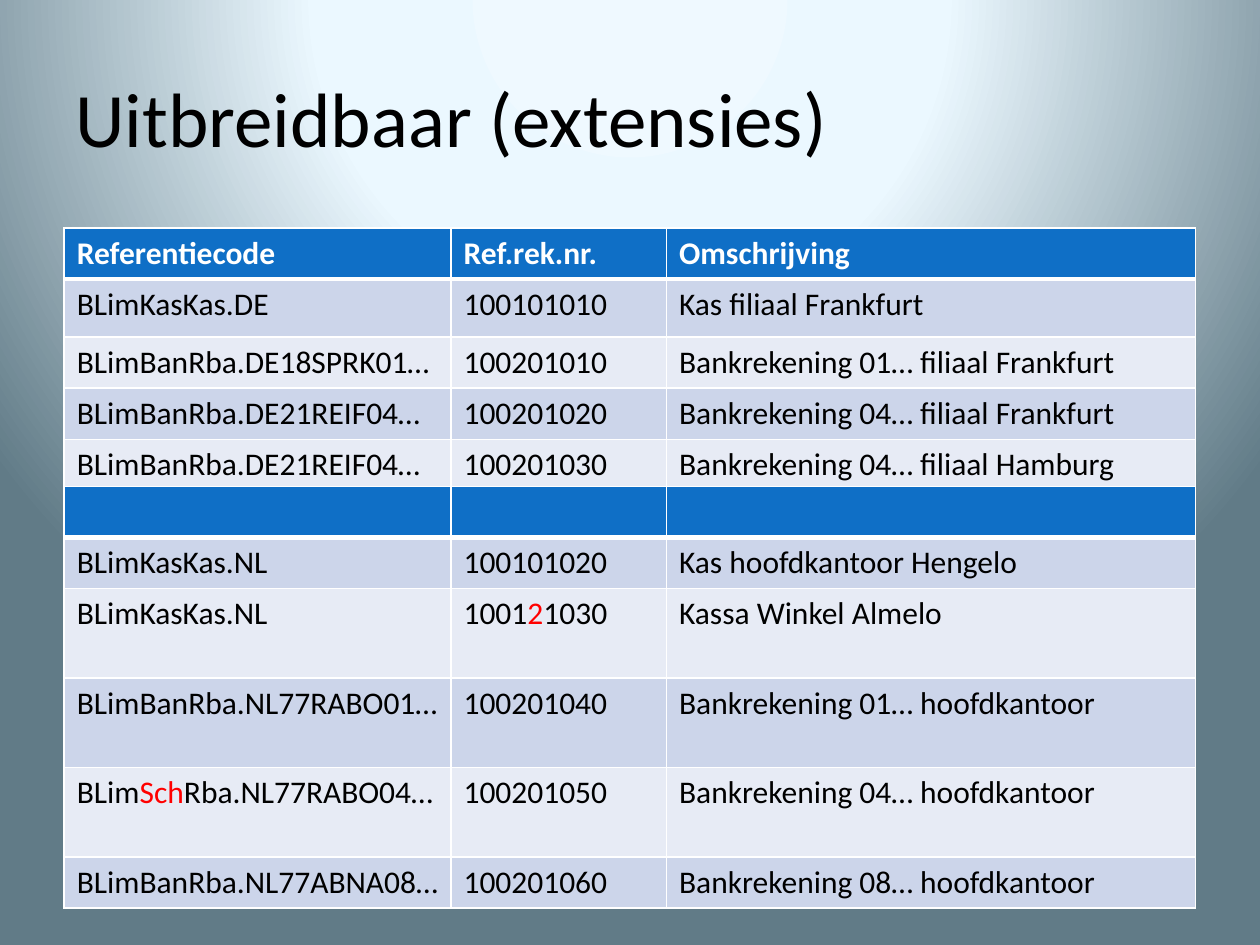
from lxml import etree
from pptx import Presentation
from pptx.dml.color import RGBColor
from pptx.enum import text
from pptx.oxml import parse_xml
from pptx.oxml.ns import nsdecls, qn
from pptx.util import Inches, Pt

FONT = "Calibri"
BLACK = RGBColor(0x00, 0x00, 0x00)
WHITE = RGBColor(0xFF, 0xFF, 0xFF)
RED = RGBColor(0xFF, 0x00, 0x00)
HEADER = RGBColor(0x0F, 0x6F, 0xC6)
BAND_DARK = RGBColor(0xCC, 0xD5, 0xEA)
BAND_LIGHT = RGBColor(0xE7, 0xEB, 0xF5)
BACKGROUND = ((0, "EFF9FF"), (40, "EBF8FF"), (100, "617B87"))

COL_WIDTHS = (3.07, 1.71, 4.2)
BLANK_HEADER = ("", "", "")

# A tuple inside a row holds alternating plain and highlighted parts
GERMAN_ROWS = (
    ("Referentiecode", "Ref.rek.nr.", "Omschrijving"),
    ("BLimKasKas.DE", "100101010", "Kas filiaal Frankfurt"),
    ("BLimBanRba.DE18SPRK01…", "100201010", "Bankrekening 01… filiaal Frankfurt"),
    ("BLimBanRba.DE21REIF04…", "100201020", "Bankrekening 04… filiaal Frankfurt"),
    ("BLimBanRba.DE21REIF04…", "100201030", "Bankrekening 04… filiaal Hamburg"),
)
DUTCH_ROWS = (
    BLANK_HEADER,
    ("BLimKasKas.NL", "100101020", "Kas hoofdkantoor Hengelo"),
    ("BLimKasKas.NL", ("1001", "2", "1030"), "Kassa Winkel Almelo"),
    ("BLimBanRba.NL77RABO01…", "100201040", "Bankrekening 01… hoofdkantoor"),
    (("BLim", "Sch", "Rba.NL77RABO04…"), "100201050",
     "Bankrekening 04… hoofdkantoor"),
    ("BLimBanRba.NL77ABNA08…", "100201060", "Bankrekening 08… hoofdkantoor"),
)


def write(tf, content, size=18, color=BLACK, bold=False):
    """Write a string, or alternating plain and red parts, in one paragraph."""
    p = tf.paragraphs[0]
    p.alignment = text.PP_ALIGN.LEFT
    p.font.size, p.font.name = Pt(size), FONT
    parts = (content,) if isinstance(content, str) else content
    for i, part in enumerate(parts):
        if not part:
            continue
        r = p.add_run()
        r.text = part
        r.font.size, r.font.name, r.font.bold = Pt(size), FONT, bold
        r.font.color.rgb = RED if i % 2 else color


def set_background(s):
    s.background.fill.gradient()
    grad = s._element.find(".//" + qn("a:gradFill"))
    for child in list(grad):
        grad.remove(child)
    stops = etree.SubElement(grad, qn("a:gsLst"))
    for pos, color in BACKGROUND:
        stop = etree.SubElement(stops, qn("a:gs"), pos=str(pos * 1000))
        etree.SubElement(stop, qn("a:srgbClr"), val=color)
    shade = etree.SubElement(grad, qn("a:path"), path="circle")
    etree.SubElement(shade, qn("a:fillToRect"),
                     l="50000", t="-80000", r="50000", b="180000")


def set_borders(cell, bottom):
    """White lines on all sides; they go before the fill in the cell XML."""
    tc_pr = cell._tc.get_or_add_tcPr()
    for i, (side, width) in enumerate((("L", 1), ("R", 1), ("T", 1), ("B", bottom))):
        tc_pr.insert(i, parse_xml(
            f'<a:ln{side} {nsdecls("a")} w="{Pt(width)}"><a:solidFill>'
            f'<a:srgbClr val="{WHITE}"/></a:solidFill></a:ln{side}>'))


def add_title(s, left, top, width, height, content):
    sp = s.shapes.title
    sp.left, sp.top, sp.width, sp.height = map(Inches, (left, top, width, height))
    tf = sp.text_frame
    tf.word_wrap = True
    tf.vertical_anchor = text.MSO_ANCHOR.MIDDLE
    write(tf, content, size=44)


def add_code_table(s, left, top, rows, heights):
    table = s.shapes.add_table(
        len(rows), len(COL_WIDTHS), Inches(left), Inches(top),
        Inches(sum(COL_WIDTHS)), Inches(sum(heights))).table
    for column, width in zip(table.columns, COL_WIDTHS):
        column.width = Inches(width)
    for i, (row, height) in enumerate(zip(rows, heights)):
        table.rows[i].height = Inches(height)
        is_header = i == 0
        fill = HEADER if is_header else BAND_DARK if i % 2 else BAND_LIGHT
        for j, content in enumerate(row):
            cell = table.cell(i, j)
            cell.fill.solid()
            cell.fill.fore_color.rgb = fill
            set_borders(cell, bottom=3 if is_header else 1)
            write(cell.text_frame, content,
                  color=WHITE if is_header else BLACK, bold=is_header)


def main():
    prs = Presentation()
    prs.slide_width, prs.slide_height = Inches(10), Inches(7.5)
    s = prs.slides.add_slide(prs.slide_layouts[5])

    set_background(s)
    add_title(s, 0.5, 0.3, 9, 1.25, "Uitbreidbaar (extensies)")
    # German branches, then the Dutch head office
    add_code_table(s, 0.51, 1.81, GERMAN_ROWS, (0.4, 0.46, 0.4, 0.4, 0.4))
    add_code_table(s, 0.51, 3.86, DUTCH_ROWS, (0.4, 0.4, 0.71, 0.71, 0.71, 0.4))

    prs.save("out.pptx")


if __name__ == "__main__":
    main()
